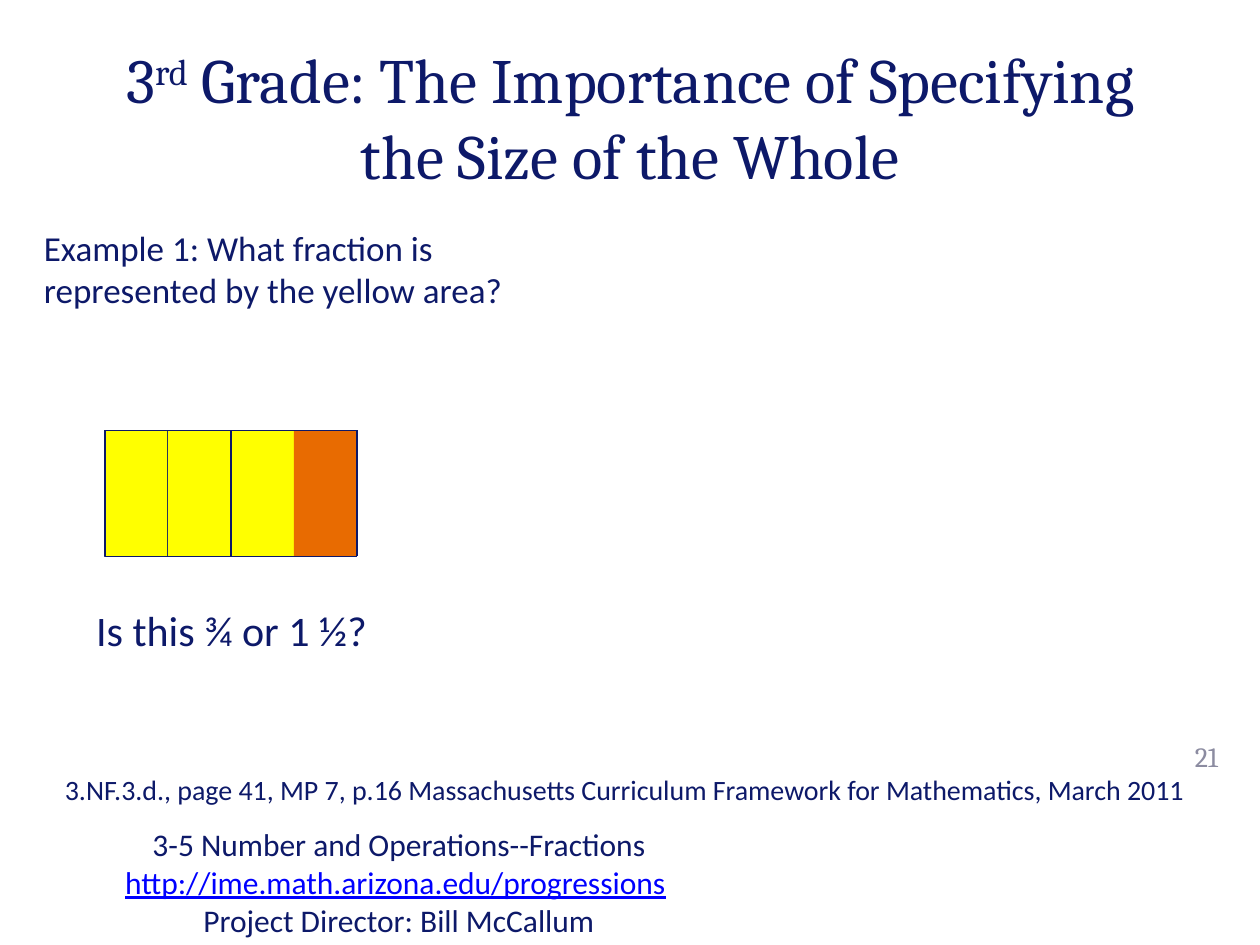
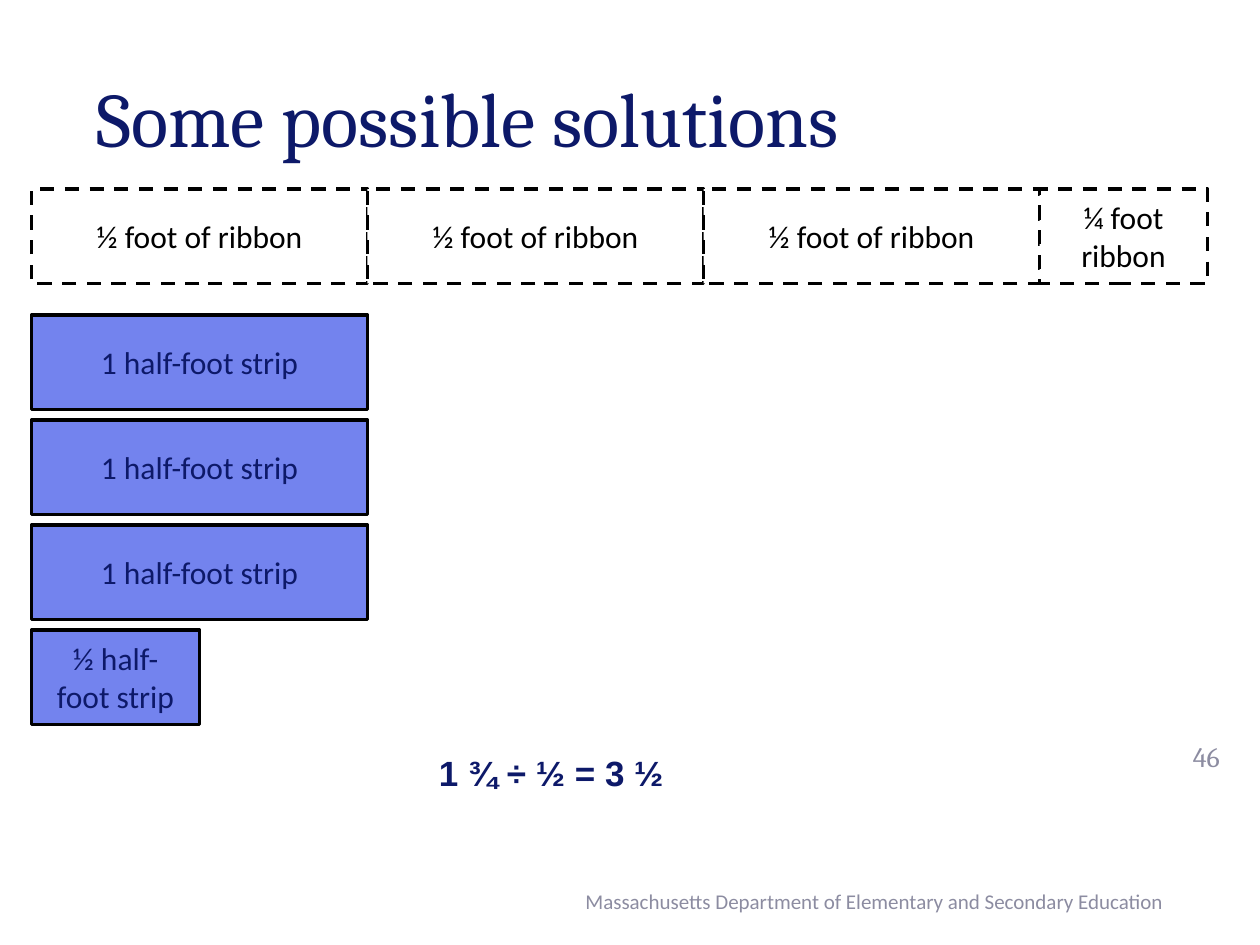
import pptx
import pptx.util
import pptx.dml.color
import pptx.enum.dml
import pptx.enum.shapes
import pptx.enum.text
from dataclasses import dataclass
from lxml import etree


@dataclass(frozen=True)
class Theme:
    navy: str = "0D1969"
    grey: str = "8C8CA1"
    link: str = "0000FF"
    yellow: str = "FFFF00"
    orange: str = "E86B01"
    strip: str = "7383EE"
    black: str = "000000"
    white: str = "FFFFFF"
    heading: str = "Cambria"
    body: str = "Calibri"
    formula: str = "Arial"
    title_long: int = 36
    title_short: int = 44
    question: int = 24
    example: int = 20
    label: int = 18
    small: int = 16
    footer: int = 12


theme = Theme()
rgb = pptx.dml.color.RGBColor.from_string
Align = pptx.enum.text.PP_ALIGN
Anchor = pptx.enum.text.MSO_ANCHOR

deck = pptx.Presentation()
deck.slide_width = pptx.util.Inches(10)
deck.slide_height = pptx.util.Inches(7.5)
col = deck.slide_width / 120
row = deck.slide_height / 90


def place(slide, left, top, cols, rows, fill=None, line=None, weight=2, dash=False):
    area = [round(v) for v in (left * col, top * row, cols * col, rows * row)]
    if fill is None:
        return slide.shapes.add_textbox(*area)
    block = slide.shapes.add_shape(pptx.enum.shapes.MSO_SHAPE.RECTANGLE, *area)
    block.shadow.inherit = False
    block.fill.solid()
    block.fill.fore_color.rgb = rgb(fill)
    if line is None:
        block.line.fill.background()
    else:
        block.line.color.rgb = rgb(line)
        block.line.width = pptx.util.Pt(weight)
        if dash:
            block.line.dash_style = pptx.enum.dml.MSO_LINE.DASH
    return block


def write(block, *paragraphs, size, font=theme.body, color=theme.navy, align=Align.LEFT,
          anchor=Anchor.TOP, bold=False, wrap=True, inset=0.1):
    frame = block.text_frame
    frame.word_wrap = wrap
    frame.vertical_anchor = anchor
    frame.margin_left = pptx.util.Inches(inset)
    for index, pieces in enumerate(paragraphs):
        paragraph = frame.paragraphs[0] if index == 0 else frame.add_paragraph()
        paragraph.alignment = align
        for piece in [pieces] if isinstance(pieces, str) else pieces:
            words, style = (piece, None) if isinstance(piece, str) else piece
            run = paragraph.add_run()
            run.text = words
            run.font.size = pptx.util.Pt(size)
            run.font.name = font
            run.font.bold = bold
            run.font.color.rgb = rgb(theme.link if style == "link" else color)
            if style == "link":
                run.font.underline = True
            if style == "super":
                run.font._element.set("baseline", "30000")


pages = [
    (["3", ("rd", "super"), " Grade: The Importance of Specifying the Size of the Whole"],
     theme.title_long, Align.CENTER, "21"),
    ("Some possible solutions", theme.title_short, Align.LEFT, "46"),
]
for title, title_size, title_align, number in pages:
    slide = deck.slides.add_slide(deck.slide_layouts[6])
    write(place(slide, 8, 3.6, 104, 15), title, size=title_size, font=theme.heading,
          align=title_align, anchor=Anchor.MIDDLE)
    write(place(slide, 111.4, 69, 7, 6), number, size=theme.small, font=theme.heading,
          color=theme.grey, align=Align.CENTER, anchor=Anchor.MIDDLE)
whole, solutions = deck.slides

write(place(whole, 3, 21, 51, 9.2), "Example 1: What fraction is represented by the yellow area?",
      size=theme.example)

bar_left, bar_top, part, bar_height = 10, 41, 6, 12
for index, fill in enumerate([theme.yellow] * 3 + [theme.orange]):
    place(whole, bar_left + index * part, bar_top, part, bar_height, fill,
          theme.navy if index == 0 else None, 0.75)
bar_right, bar_bottom = bar_left + 4 * part, bar_top + bar_height
edges = [(x, bar_bottom, x, bar_top) for x in (bar_left, bar_left + 2 * part, bar_right)]
edges += [(bar_left, y, bar_right, y) for y in (bar_top, bar_bottom)]
for x1, y1, x2, y2 in edges:
    edge = whole.shapes.add_connector(
        pptx.enum.shapes.MSO_CONNECTOR.STRAIGHT,
        round(x1 * col), round(y1 * row), round(x2 * col), round(y2 * row))
    edge.line.color.rgb = rgb(theme.navy)
    edge.line.width = pptx.util.Pt(0.75)
    etree.SubElement(edge._element.spPr, pptx.oxml.ns.qn("a:effectLst"))

write(place(whole, 6, 57, 33, 6), "Is this ¾ or 1 ½? ", size=theme.question, align=Align.CENTER)
write(place(whole, 5, 73, 110.4, 4.4),
      "3.NF.3.d., page 41, MP 7, p.16 Massachusetts Curriculum Framework for Mathematics, March 2011",
      size=theme.small, wrap=False)
write(place(whole, 0, 78, 76, 12.1),
      ["3-5 Number and Operations--Fractions ",
       ("http://ime.math.arizona.edu/progressions", "link"), " "],
      "Project Director: Bill McCallum", size=theme.label, align=Align.CENTER)

margin, half_foot, strip_height = 3, 32, 9
ribbon = ["½ foot of ribbon"] * 3 + ["¼ foot ribbon"]
strips = ["1 half-foot strip"] * 3 + ["½ half- foot strip"]
for index, (piece, strip) in enumerate(zip(ribbon, strips)):
    length = half_foot if index < 3 else half_foot / 2
    write(place(solutions, margin + index * half_foot, 18, length, strip_height,
                theme.white, theme.black, dash=True),
          piece, size=theme.label, color=theme.black, align=Align.CENTER, anchor=Anchor.MIDDLE)
    write(place(solutions, margin, 30 + index * 10, length, strip_height,
                theme.strip, theme.black),
          strip, size=theme.label, align=Align.CENTER, anchor=Anchor.MIDDLE)

write(place(solutions, 34, 71, 61, 5.3), "1 ¾ ÷ ½ = 3 ½", size=theme.example,
      font=theme.formula, bold=True, inset=0.65)
write(place(solutions, 41, 83.4, 71, 4.8),
      "Massachusetts Department of Elementary and Secondary Education",
      size=theme.footer, color=theme.grey, align=Align.RIGHT, anchor=Anchor.MIDDLE)

deck.save("out.pptx")
